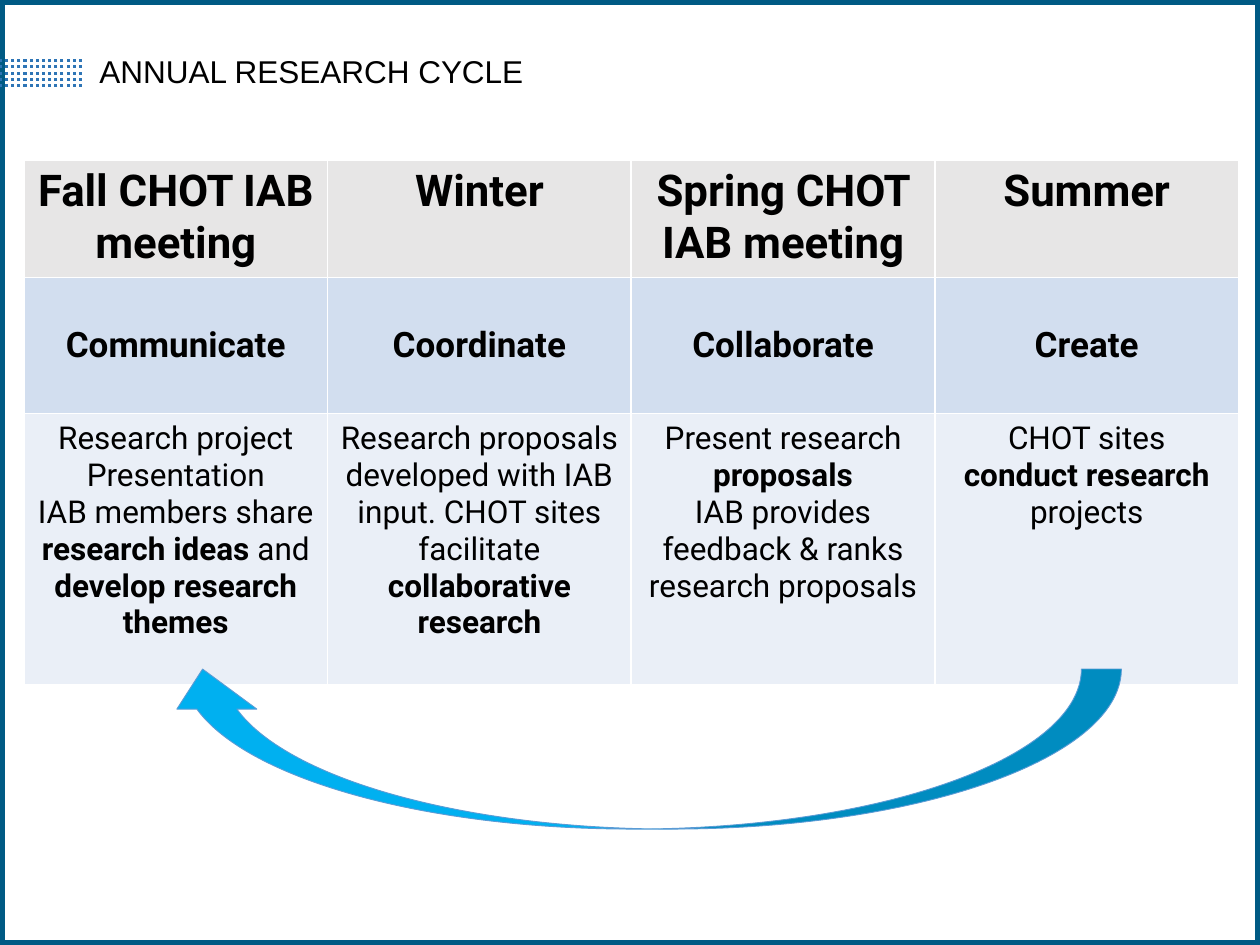
import pptx
import pptx.util
import pptx.dml.color
import pptx.enum.dml
import pptx.enum.shapes
import pptx.enum.text
from lxml import etree

Inches, Pt = pptx.util.Inches, pptx.util.Pt
SHAPE = pptx.enum.shapes.MSO_SHAPE
ALIGN = pptx.enum.text.PP_ALIGN
ANCHOR = pptx.enum.text.MSO_ANCHOR

# Content: each paragraph is a list of (text, bold) runs
TITLE = "ANNUAL RESEARCH CYCLE"
SEASONS = ["Fall CHOT IAB meeting", "Winter", "Spring CHOT IAB meeting", "Summer"]
ACTIONS = ["Communicate", "Coordinate", "Collaborate", "Create"]
DETAILS = [
    [[("Research project Presentation", False)],
     [("IAB members share ", False), ("research ideas ", True), ("and ", False),
      ("develop research themes", True)]],
    [[("Research proposals developed with IAB input. CHOT sites facilitate ", False),
      ("collaborative research", True)]],
    [[("Present research ", False), ("proposals", True)],
     [("IAB provides feedback & ranks research proposals", False)]],
    [[("CHOT sites ", False), ("conduct research ", True), ("projects", False)]],
]

COLORS = {"frame": "005A84", "dots": "2E75B6", "text": "000000", "season": "E7E6E6",
          "action": "D2DEEF", "detail": "EAEFF7", "arrow": "00B0F0",
          "arrow_edge": "5B9BD5"}

# Slide grid, in inches
WIDTH, HEIGHT = 10, 7.5
TABLE_LEFT, TABLE_TOP, COLUMN = 0.19, 1.27, 2.41
ROWS = [  # colour, height, text size, anchor, cell paragraphs
    ("season", 0.91, 25, ANCHOR.TOP, [[[(name, True)]] for name in SEASONS]),
    ("action", 1.08, 20, ANCHOR.MIDDLE, [[[(name, True)]] for name in ACTIONS]),
    ("detail", 2.15, 18, ANCHOR.TOP, DETAILS),
]
DOT_ROWS, DOT_TOP, DOT_GAP, DOT_WIDTH = 5, 0.48, 0.05, 0.65


def color(name):
    return pptx.dml.color.RGBColor.from_string(COLORS[name])


def style(font, face, size, bold=False):
    font.name, font.size, font.bold = face, Pt(size), bold
    font.color.rgb = color("text")


prs = pptx.Presentation()
prs.slide_width, prs.slide_height = Inches(WIDTH), Inches(HEIGHT)
slide = prs.slides.add_slide(prs.slide_layouts[6])
shapes = slide.shapes

# Frame around the slide
frame = shapes.add_shape(SHAPE.RECTANGLE, 0, 0, prs.slide_width, prs.slide_height)
frame.shadow.inherit = False
frame.fill.background()
frame.line.color.rgb = color("frame")
frame.line.width = Pt(6)

# Dotted band beside the title
for row in range(DOT_ROWS):
    y = Inches(DOT_TOP + row * DOT_GAP)
    dots = shapes.add_connector(pptx.enum.shapes.MSO_CONNECTOR.STRAIGHT,
                                Inches(DOT_WIDTH), y, 0, y)
    dots.line.color.rgb = color("dots")
    dots.line.width = Pt(1.75)
    dots.line.dash_style = pptx.enum.dml.MSO_LINE.ROUND_DOT
    etree.SubElement(dots._element.spPr, pptx.oxml.ns.qn("a:effectLst"))

# Title
title = shapes.add_textbox(Inches(0.69), Inches(0.39), Inches(8.62), Inches(0.39))
title.text_frame.word_wrap = True
title.text_frame.vertical_anchor = ANCHOR.MIDDLE
title.text_frame.text = TITLE
heading = title.text_frame.paragraphs[0]
heading.line_spacing = 0.9
style(heading.runs[0].font, "Arial", 18)

# Cycle table: the default table style supplies the white rules
cycle = shapes.add_table(len(ROWS), len(SEASONS), Inches(TABLE_LEFT), Inches(TABLE_TOP),
                         Inches(COLUMN * len(SEASONS)),
                         Inches(sum(row[1] for row in ROWS))).table
for column in cycle.columns:
    column.width = Inches(COLUMN)
for r, (kind, height, size, anchor, entries) in enumerate(ROWS):
    cycle.rows[r].height = Inches(height)
    for c, paragraphs in enumerate(entries):
        cell = cycle.cell(r, c)
        cell.fill.solid()
        cell.fill.fore_color.rgb = color(kind)
        cell.vertical_anchor = anchor
        cell.text_frame.text = "\n".join("" for _ in paragraphs)
        for paragraph, runs in zip(cell.text_frame.paragraphs, paragraphs):
            paragraph.alignment = ALIGN.CENTER
            for text, bold in runs:
                run = paragraph.add_run()
                run.text = text
                style(run.font, "Roboto", size, bold)

# Arrow back from summer to fall
arrow = shapes.add_shape(SHAPE.CURVED_DOWN_ARROW, Inches(1.29), Inches(5.31),
                         Inches(7.61), Inches(1.27))
arrow.rotation = 180
arrow.shadow.inherit = False
arrow.fill.solid()
arrow.fill.fore_color.rgb = color("arrow")
arrow.line.color.rgb = color("arrow_edge")
arrow.line.width = Pt(0.5)

prs.save("out.pptx")
